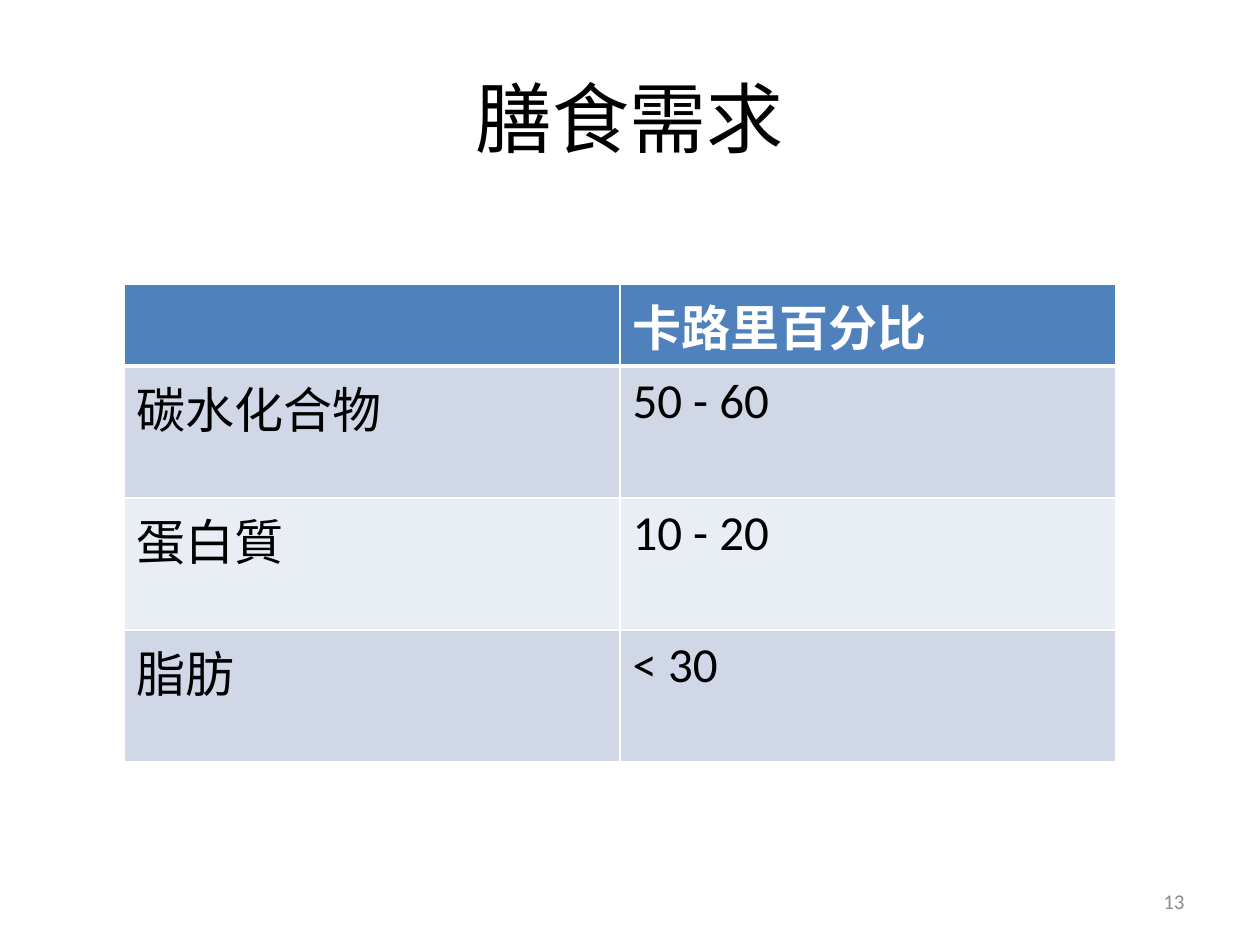
import pptx
import pptx.dml.color
import pptx.enum.text
import pptx.oxml
import pptx.oxml.ns
import pptx.util

PX = 914400 // 126
ALIGN = pptx.enum.text.PP_ALIGN
ROWS = [
    ("", "卡路里百分比"),
    ("碳水化合物", "50 - 60"),
    ("蛋白質", "10 - 20"),
    ("脂肪", "< 30"),
]
HEADER_FILL = "4F81BD"
BAND_FILLS = ("D0D8E8", "E9EDF4")
HEADER_H, BODY_H = 82, 132


def px(*values):
    """Turn pixel lengths into EMU."""
    return [pptx.util.Emu(v * PX) for v in values]


def color(hex_code):
    """Return an RGB colour from a hex string."""
    return pptx.dml.color.RGBColor.from_string(hex_code)


def add_run(p, text, size, hex_code, bold=False):
    """Add one styled run to a paragraph."""
    r = p.add_run()
    r.text = text
    r.font.name = "Calibri"
    r.font.size = pptx.util.Pt(size)
    r.font.bold = bold
    r.font.color.rgb = color(hex_code)


def add_text(s, box, text, size, hex_code, align):
    """Place a vertically centred line of text in a box."""
    tf = s.shapes.add_textbox(*px(*box)).text_frame
    tf.word_wrap = True
    tf.vertical_anchor = pptx.enum.text.MSO_ANCHOR.MIDDLE
    p = tf.paragraphs[0]
    p.alignment = align
    add_run(p, text, size, hex_code)


def set_borders(cell, **widths):
    """Draw white cell borders with the given widths in points."""
    tc_pr = cell._tc.get_or_add_tcPr()
    for side, width in widths.items():
        tc_pr.append(pptx.oxml.parse_xml(
            f'<a:ln{side} {pptx.oxml.ns.nsdecls("a")} w="{pptx.util.Pt(width)}">'
            '<a:solidFill><a:srgbClr val="FFFFFF"/></a:solidFill>'
            f'</a:ln{side}>'))


def add_diet_table(s, box):
    """Place the calorie table with a header row and banded body rows."""
    table = s.shapes.add_table(len(ROWS), len(ROWS[0]), *px(*box)).table
    for i, row in enumerate(ROWS):
        header = i == 0
        table.rows[i].height = px(HEADER_H if header else BODY_H)[0]
        for j, text in enumerate(row):
            cell = table.cell(i, j)
            set_borders(cell, L=1, R=1, T=3 if i == 1 else 1, B=3 if header else 1)
            cell.fill.solid()
            cell.fill.fore_color.rgb = color(HEADER_FILL if header else BAND_FILLS[(i - 1) % 2])
            if text:
                add_run(cell.text_frame.paragraphs[0], text, 28,
                        "FFFFFF" if header else "000000", header)


def main():
    """Build and save the slide."""
    prs = pptx.Presentation()
    prs.slide_width, prs.slide_height = px(1260, 945)
    s = prs.slides.add_slide(prs.slide_layouts[6])
    add_text(s, (63, 38, 1134, 158), "膳食需求", 44, "000000", ALIGN.CENTER)
    add_diet_table(s, (124, 284, 992, HEADER_H + 3 * BODY_H))
    add_text(s, (903, 876, 294, 50), "13", 12, "8C8C8C", ALIGN.RIGHT)
    prs.save("out.pptx")


if __name__ == "__main__":
    main()
